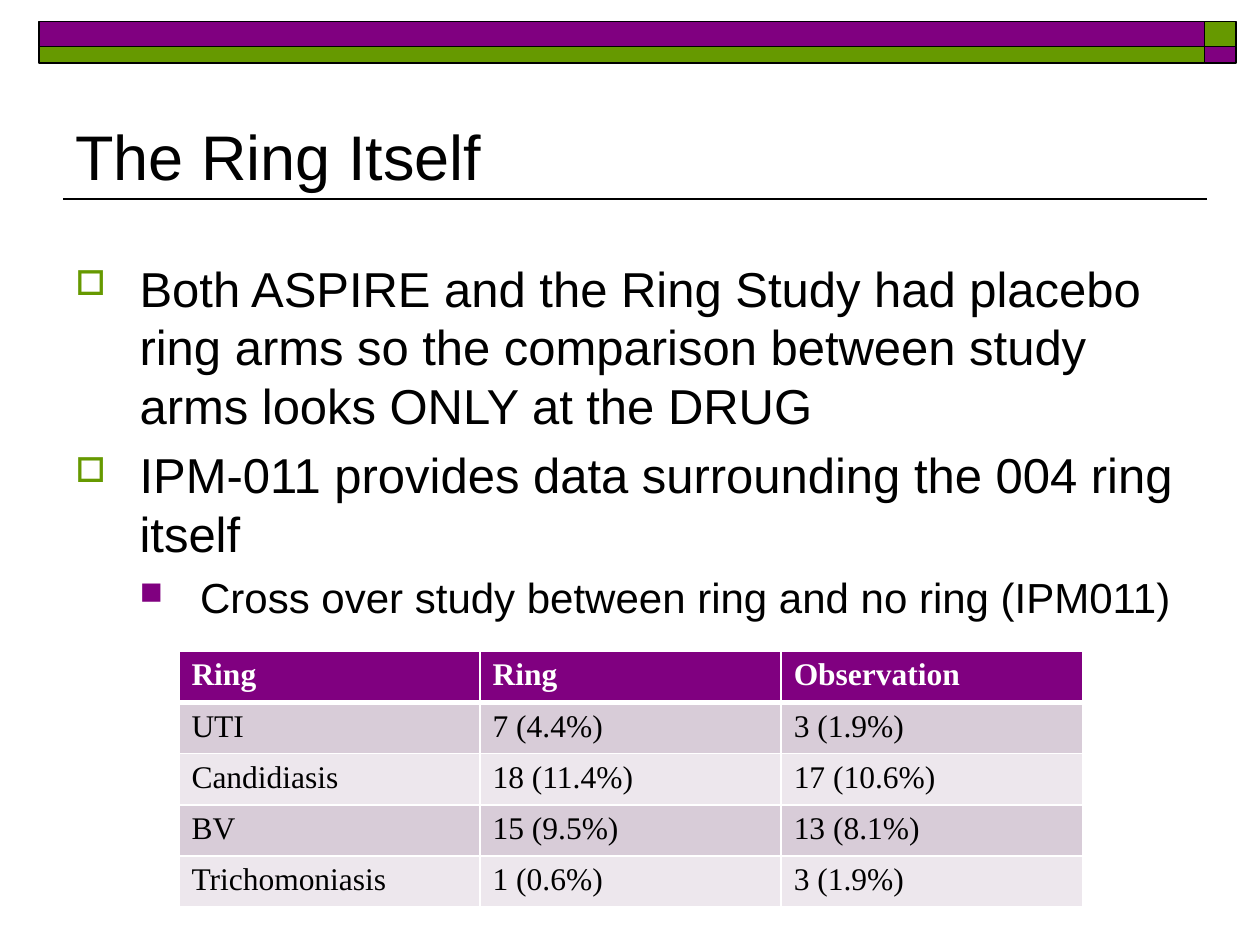
from dataclasses import dataclass

from lxml import etree
from pptx import Presentation
from pptx.dml.color import RGBColor
from pptx.enum.shapes import MSO_CONNECTOR, MSO_SHAPE
from pptx.enum.text import MSO_ANCHOR
from pptx.oxml.ns import qn
from pptx.util import Inches, Pt


@dataclass(frozen=True)
class Theme:
    purple: str = "800080"
    green: str = "669900"
    black: str = "000000"
    white: str = "FFFFFF"
    dark_band: str = "D8CCD8"
    light_band: str = "EDE7ED"
    heading_font: str = "Arial"
    table_font: str = "Times New Roman"
    title_size: int = 36
    point_size: int = 28
    subpoint_size: int = 24
    table_size: int = 18


THEME = Theme()

POINTS = [
    (0, "Both ASPIRE and the Ring Study had placebo ring arms "
        "so the comparison between study arms looks ONLY at the DRUG"),
    (0, "IPM-011 provides data surrounding the 004 ring itself"),
    (1, "Cross over study between ring and no ring (IPM011)"),
]
LEVELS = [
    ("□", THEME.green, 70, 0.51, 0.51, THEME.point_size),
    ("■", THEME.purple, 75, 0.99, 0.48, THEME.subpoint_size),
]
INFECTIONS = [
    ("Ring", "Ring", "Observation"),
    ("UTI", "7 (4.4%)", "3 (1.9%)"),
    ("Candidiasis", "18 (11.4%)", "17 (10.6%)"),
    ("BV", "15 (9.5%)", "13 (8.1%)"),
    ("Trichomoniasis", "1 (0.6%)", "3 (1.9%)"),
]


def rgb(color):
    return RGBColor.from_string(color)


def style(paragraph, font, size, color, bold=False):
    for run in paragraph.runs:
        run.font.name = font
        run.font.size = Pt(size)
        run.font.color.rgb = rgb(color)
        run.font.bold = bold


def add_color(parent, color):
    etree.SubElement(parent, qn("a:srgbClr"), val=color)


def add_banner(slide, left, top, width, height):
    corner, upper = 0.25, 0.2
    columns = [(left, width - corner), (left + width - corner, corner)]
    rows = [(top, upper), (top + upper, height - upper)]
    for r, (y, tall) in enumerate(rows):
        for c, (x, wide) in enumerate(columns):
            block = slide.shapes.add_shape(
                MSO_SHAPE.RECTANGLE, Inches(x), Inches(y), Inches(wide), Inches(tall))
            block.shadow.inherit = False
            block.fill.solid()
            block.fill.fore_color.rgb = rgb(THEME.purple if r == c else THEME.green)
            block.line.color.rgb = rgb(THEME.black)
            block.line.width = Pt(1)


def add_title(slide, left, top, width, height):
    bottom = Inches(top + height)
    rule = slide.shapes.add_connector(
        MSO_CONNECTOR.STRAIGHT, Inches(left + width + 0.08), bottom, Inches(left), bottom)
    rule.line.color.rgb = rgb(THEME.black)
    rule.line.width = Pt(1)
    etree.SubElement(rule._element.spPr, qn("a:effectLst"))

    title = slide.shapes.add_textbox(
        Inches(left), Inches(top), Inches(width), Inches(height)).text_frame
    title.word_wrap = True
    title.vertical_anchor = MSO_ANCHOR.BOTTOM
    title.text = "The Ring Itself"
    style(title.paragraphs[0], THEME.heading_font, THEME.title_size, THEME.black)


def add_bullet(paragraph, char, color, percent, indent, hanging):
    properties = paragraph._p.get_or_add_pPr()
    properties.set("marL", str(Inches(indent)))
    properties.set("indent", str(-Inches(hanging)))
    add_color(etree.SubElement(properties, qn("a:buClr")), color)
    etree.SubElement(properties, qn("a:buSzPct"), val=str(percent * 1000))
    etree.SubElement(properties, qn("a:buChar"), char=char)


def add_points(slide, left, top, width, height):
    body = slide.shapes.add_textbox(
        Inches(left), Inches(top), Inches(width), Inches(height)).text_frame
    body.word_wrap = True
    body.text = "\n".join(text for _, text in POINTS)
    for paragraph, (level, _) in zip(body.paragraphs, POINTS):
        *bullet, size = LEVELS[level]
        paragraph.level = level
        paragraph.space_before = Pt(round(0.21 * size, 1))
        add_bullet(paragraph, *bullet)
        style(paragraph, THEME.heading_font, size, THEME.black)


def add_borders(cell, widths):
    properties = cell._tc.get_or_add_tcPr()
    for side, width in widths.items():
        border = etree.SubElement(properties, qn(f"a:ln{side}"), w=str(Pt(width)))
        add_color(etree.SubElement(border, qn("a:solidFill")), THEME.white)


def add_infection_table(slide, left, top, width, height):
    table = slide.shapes.add_table(
        len(INFECTIONS), len(INFECTIONS[0]),
        Inches(left), Inches(top), Inches(width), Inches(height)).table
    for r, values in enumerate(INFECTIONS):
        header = r == 0
        band = THEME.dark_band if r % 2 else THEME.light_band
        widths = {"L": 1, "R": 1, "T": 3 if r == 1 else 1, "B": 3 if header else 1}
        for c, value in enumerate(values):
            cell = table.cell(r, c)
            add_borders(cell, widths)
            cell.fill.solid()
            cell.fill.fore_color.rgb = rgb(THEME.purple if header else band)
            cell.text_frame.text = value
            style(cell.text_frame.paragraphs[0], THEME.table_font, THEME.table_size,
                  THEME.white if header else THEME.black, header)


def main():
    deck = Presentation()
    deck.slide_width, deck.slide_height = Inches(10), Inches(7.5)
    slide = deck.slides.add_slide(deck.slide_layouts[6])
    add_banner(slide, 0.31, 0.17, 9.5, 0.33)
    add_title(slide, 0.5, 0.33, 9, 1.25)
    add_points(slide, 0.5, 2, 9, 4.7)
    add_infection_table(slide, 1.42, 5.17, 7.17, 2.03)
    deck.save("out.pptx")


if __name__ == "__main__":
    main()
